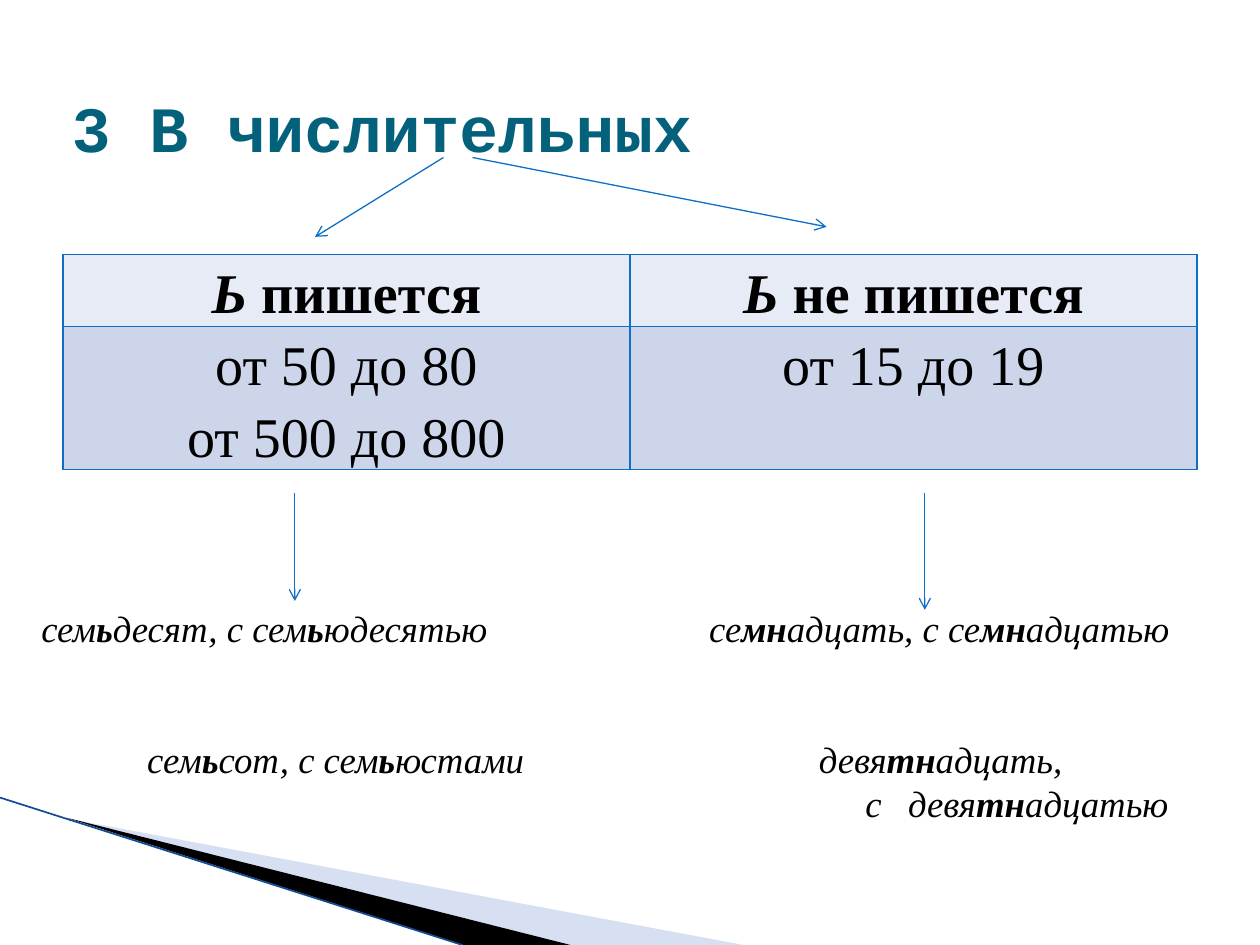
from dataclasses import dataclass

from lxml import etree
from pptx import Presentation
from pptx.dml.color import RGBColor
from pptx.enum.shapes import MSO_CONNECTOR
from pptx.enum.text import MSO_ANCHOR, MSO_AUTO_SIZE, PP_ALIGN
from pptx.oxml.ns import qn
from pptx.util import Inches, Pt

STRAIGHT = MSO_CONNECTOR.STRAIGHT
MIDDLE, TOP = MSO_ANCHOR.MIDDLE, MSO_ANCHOR.TOP
NO_AUTOFIT = MSO_AUTO_SIZE.NONE
LEFT, CENTER = PP_ALIGN.LEFT, PP_ALIGN.CENTER
TITLE_ONLY = 5


@dataclass(frozen=True)
class Theme:
    title_font: str = "Courier New"
    body_font: str = "Times New Roman"
    title_size: float = 36.9
    table_size: float = 32
    example_size: float = 21
    title: str = "04617B"
    text: str = "000000"
    accent: str = "0F6FC6"
    header_fill: str = "E7EBF5"
    body_fill: str = "CCD5EA"
    pale_wedge: str = "9DB2E1"
    dark_wedge: str = "000000"
    edge: str = "0F4C94"


def write(paragraph, text, *, font, size, color, bold=False, italic=False,
          mark="bold", align=LEFT, line_spacing=None, space_before=0):
    """Fill a paragraph; parts between asterisks also get the mark style."""
    paragraph.alignment = align
    paragraph.space_before = Pt(space_before)
    if line_spacing:
        paragraph.line_spacing = line_spacing
    for index, part in enumerate(text.split("*")):
        if not part:
            continue
        run = paragraph.add_run()
        run.text = part
        run.font.name = font
        run.font.size = Pt(size)
        run.font.color.rgb = RGBColor.from_string(color)
        run.font.bold, run.font.italic = bold, italic
        if index % 2:
            setattr(run.font, mark, True)


def paragraphs(frame, count):
    return [frame.paragraphs[0]] + [frame.add_paragraph() for _ in range(count - 1)]


def set_tabs(paragraph, stops):
    tab_list = etree.SubElement(paragraph._p.get_or_add_pPr(), qn("a:tabLst"))
    for stop in stops:
        etree.SubElement(tab_list, qn("a:tab"), pos=str(Inches(stop)), algn="l")


def set_borders(cell, color, width):
    properties = cell._tc.get_or_add_tcPr()
    for index, side in enumerate(("lnL", "lnR", "lnT", "lnB")):
        line = etree.Element(qn(f"a:{side}"), w=str(Pt(width)))
        fill = etree.SubElement(line, qn("a:solidFill"))
        etree.SubElement(fill, qn("a:srgbClr"), val=color)
        properties.insert(index, line)


class SlideBuilder:
    def __init__(self, slide, theme):
        self.slide = slide
        self.theme = theme

    def title(self, text, left, top, width, height):
        shape = self.slide.shapes.title
        shape.left, shape.top = Inches(left), Inches(top)
        shape.width, shape.height = Inches(width), Inches(height)
        frame = shape.text_frame
        frame.auto_size = NO_AUTOFIT
        frame.vertical_anchor = MIDDLE
        frame.margin_top = Inches(0.19)
        write(frame.paragraphs[0], text, font=self.theme.title_font,
              size=self.theme.title_size, color=self.theme.title, bold=True)

    def wedge(self, points, color, opacity=100):
        corners = [(Inches(x), Inches(y)) for x, y in points]
        builder = self.slide.shapes.build_freeform(*corners[0])
        builder.add_line_segments(corners[1:], close=True)
        shape = builder.convert_to_shape()
        shape.shadow.inherit = False
        shape.line.fill.background()
        shape.fill.solid()
        shape.fill.fore_color.rgb = RGBColor.from_string(color)
        if opacity < 100:
            tint = shape._element.spPr.find(".//" + qn("a:srgbClr"))
            etree.SubElement(tint, qn("a:alpha"), val=str(opacity * 1000))

    def line(self, start, end, color, width, arrow=False):
        connector = self.slide.shapes.add_connector(
            STRAIGHT, *(Inches(value) for value in (*start, *end)))
        connector.line.color.rgb = RGBColor.from_string(color)
        connector.line.width = Pt(width)
        if arrow:
            etree.SubElement(connector.line._get_or_add_ln(), qn("a:tailEnd"), type="arrow")
        etree.SubElement(connector._element.spPr, qn("a:effectLst"))

    def table(self, rows, left, top, width, heights):
        """Draw rows of cells; each cell is a list of lines, the first row is bold."""
        table = self.slide.shapes.add_table(
            len(rows), len(rows[0]), Inches(left), Inches(top),
            Inches(width), Inches(sum(heights))).table
        table.first_row = table.horz_banding = False
        for row_index, (row, height) in enumerate(zip(rows, heights)):
            table.rows[row_index].height = Inches(height)
            header = row_index == 0
            fill = self.theme.header_fill if header else self.theme.body_fill
            for column_index, lines in enumerate(row):
                cell = table.cell(row_index, column_index)
                cell.margin_left = cell.margin_right = Inches(0.07)
                cell.margin_top = cell.margin_bottom = 0
                cell.vertical_anchor = TOP
                cell.fill.solid()
                cell.fill.fore_color.rgb = RGBColor.from_string(fill)
                set_borders(cell, self.theme.accent, 1)
                for paragraph, text in zip(paragraphs(cell.text_frame, len(lines)), lines):
                    write(paragraph, text, font=self.theme.body_font,
                          size=self.theme.table_size, color=self.theme.text,
                          bold=header, mark="italic", align=CENTER, line_spacing=1.15)

    def examples(self, lines, left, top, width, height):
        """Write lines given as (text, tab stops, space before in points)."""
        frame = self.slide.shapes.add_textbox(
            Inches(left), Inches(top), Inches(width), Inches(height)).text_frame
        frame.word_wrap = True
        frame.vertical_anchor = MIDDLE
        for paragraph, (text, stops, gap) in zip(paragraphs(frame, len(lines)), lines):
            write(paragraph, text, font=self.theme.body_font,
                  size=self.theme.example_size, color=self.theme.text,
                  italic=True, line_spacing=Pt(25), space_before=gap)
            set_tabs(paragraph, stops)


def main():
    presentation = Presentation()
    presentation.slide_width, presentation.slide_height = Inches(10), Inches(7.5)
    slide = presentation.slides.add_slide(presentation.slide_layouts[TITLE_ONLY])
    theme = Theme()
    builder = SlideBuilder(slide, theme)

    builder.wedge([(0.55, 6.5), (5.9, 7.5), (4.53, 7.5)], theme.pale_wedge, opacity=40)
    builder.wedge([(0.53, 6.49), (4.53, 7.5), (3.68, 7.5)], theme.dark_wedge)
    builder.line((0, 6.33), (3.67, 7.5), theme.edge, 0.95)

    builder.title("3 В числительных", 0.47, 0.31, 9, 1.25)
    builder.table([
        [["*Ь* пишется"], ["*Ь* не пишется"]],
        [["от 50 до 80", "от 500 до 800"], ["от 15 до 19"]],
    ], 0.5, 2.02, 9, heights=(0.57, 1.13))
    builder.examples([
        ("сем*ь*десят, с сем*ь*юдесятью\tсе*мн*адцать, с се*мн*адцатью", [5.3], 0),
        ("\tсем*ь*сот, с сем*ь*юстами\tдевя*тн*адцать,", [0.84, 6.17], 50),
        ("\tс\tдевя*тн*адцатью", [6.54, 6.88], 0),
    ], 0.23, 4.92, 9.22, 1.51)

    for start, end in (
        ((3.52, 1.25), (2.5, 1.88)),
        ((3.75, 1.25), (6.56, 1.8)),
        ((2.34, 3.91), (2.34, 4.77)),
        ((7.34, 3.91), (7.34, 4.84)),
    ):
        builder.line(start, end, theme.accent, 0.75, arrow=True)

    presentation.save("out.pptx")


if __name__ == "__main__":
    main()
